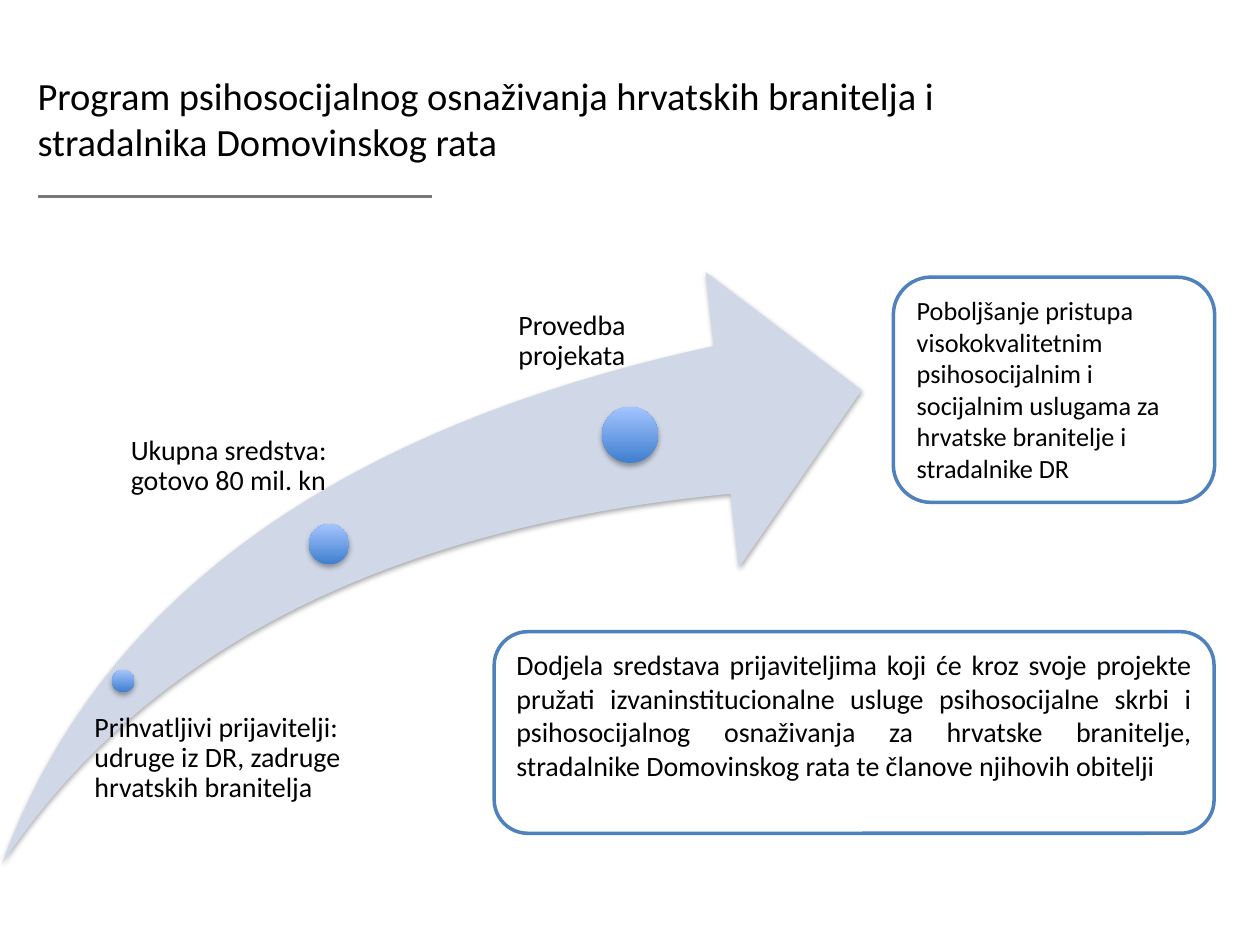
from lxml import etree
from pptx import Presentation
from pptx.dml.color import RGBColor
from pptx.enum.shapes import MSO_CONNECTOR as Connector, MSO_SHAPE as Shape
from pptx.enum.text import MSO_ANCHOR as Anchor, PP_ALIGN as Align
from pptx.oxml import parse_xml
from pptx.oxml.ns import nsdecls, qn
from pptx.util import Pt

THEME = {
    "font": "Calibri",
    "text": "000000", "paper": "FFFFFF", "arrow": "D0D8E8",
    "dot_bottom": "3F7FCE", "dot_top": "A4C4FF",
    "border": "4F81BD", "rule": "777877",
    "title_size": 22, "body_size": 16, "small_size": 15,
}

TITLE = ("Program psihosocijalnog osnaživanja hrvatskih branitelja i "
         "stradalnika Domovinskog rata")
TITLE_AREA = (14.4, 22.3, 605.5, 90)
RULE = (21.6, 112.3, 247, 112.3)
ARROW_AREA = (1.4, 155.5, 491, 337.7)

# Dot centre x, centre y, diameter; label area, left inset, text
STEPS = [
    ((70.4, 389.2, 12.8), (47.5, 407.5, 162.7, 45.4), 6.5,
     "Prihvatljivi prijavitelji: udruge iz DR, zadruge hrvatskih branitelja"),
    ((188, 311, 23), (62.6, 249.1, 146.9, 41), 12.2,
     "Ukupna sredstva: gotovo 80 mil. kn"),
    ((360, 248.5, 32), (279.4, 177.8, 107.3, 58.3), 16.8,
     "Provedba projekata"),
]

PANELS = [
    ((510.5, 158.4, 183.6, 128.7), "small_size", Align.LEFT,
     "Poboljšanje pristupa visokokvalitetnim psihosocijalnim i socijalnim "
     "uslugama za hrvatske branitelje i stradalnike DR"),
    ((282.4, 361, 411.4, 115.2), "body_size", Align.JUSTIFY,
     "Dodjela sredstava prijaviteljima koji će kroz svoje projekte pružati "
     "izvaninstitucionalne usluge psihosocijalne skrbi i psihosocijalnog "
     "osnaživanja za hrvatske branitelje, stradalnike Domovinskog rata te "
     "članove njihovih obitelji"),
]


def colour(name):
    return RGBColor.from_string(THEME[name])


def points(values):
    return [Pt(value) for value in values]


def write(shape, text, size, align=Align.LEFT, anchor=Anchor.TOP):
    frame = shape.text_frame
    frame.word_wrap = True
    frame.vertical_anchor = anchor
    para = frame.paragraphs[0]
    para.text = text
    para.alignment = align
    para.font.name = THEME["font"]
    para.font.size = Pt(THEME[size])
    para.font.color.rgb = colour("text")
    return para


def add_soft_shadow(shape):
    shape._element.spPr.append(parse_xml(
        f'<a:effectLst {nsdecls("a")}>'
        f'<a:outerShdw blurRad="{Pt(3.1)}" dist="{Pt(1.8)}" dir="5400000" rotWithShape="0">'
        '<a:srgbClr val="000000"><a:alpha val="35000"/></a:srgbClr>'
        '</a:outerShdw></a:effectLst>'))


def add_arrow(slide):
    arrow = slide.shapes.add_shape(Shape.SWOOSH_ARROW, *points(ARROW_AREA))
    arrow.adjustments[0] = arrow.adjustments[1] = 0.25
    arrow.fill.solid()
    arrow.fill.fore_color.rgb = colour("arrow")
    arrow.line.fill.background()
    add_soft_shadow(arrow)


def add_dot(slide, centre_x, centre_y, diameter):
    area = (centre_x - diameter / 2, centre_y - diameter / 2, diameter, diameter)
    dot = slide.shapes.add_shape(Shape.OVAL, *points(area))
    dot.fill.gradient()
    dot.fill.gradient_angle = 90
    for stop, name in zip(dot.fill.gradient_stops, ("dot_bottom", "dot_top")):
        stop.color.rgb = colour(name)
    dot.line.fill.background()
    add_soft_shadow(dot)


def add_label(slide, area, inset, text):
    label = slide.shapes.add_textbox(*points(area))
    frame = label.text_frame
    frame.margin_left = Pt(inset)
    frame.margin_top = frame.margin_right = frame.margin_bottom = 0
    write(label, text, "body_size").line_spacing = 0.9


def add_panel(slide, area, size, align, text):
    panel = slide.shapes.add_shape(Shape.ROUNDED_RECTANGLE, *points(area))
    panel.shadow.inherit = False
    panel.fill.solid()
    panel.fill.fore_color.rgb = colour("paper")
    panel.line.color.rgb = colour("border")
    panel.line.width = Pt(2)
    write(panel, text, size, align)


def add_rule(slide):
    rule = slide.shapes.add_connector(Connector.STRAIGHT, *points(RULE))
    rule.line.color.rgb = colour("rule")
    rule.line.width = Pt(2)
    etree.SubElement(rule._element.spPr, qn("a:effectLst"))


def main():
    deck = Presentation()
    deck.slide_width, deck.slide_height = Pt(720), Pt(540)
    slide = deck.slides.add_slide(deck.slide_layouts[6])
    add_arrow(slide)
    for dot, area, inset, text in STEPS:
        add_dot(slide, *dot)
        add_label(slide, area, inset, text)
    add_rule(slide)
    for panel in PANELS:
        add_panel(slide, *panel)
    title = slide.shapes.add_textbox(*points(TITLE_AREA))
    write(title, TITLE, "title_size", anchor=Anchor.MIDDLE)
    deck.save("out.pptx")


if __name__ == "__main__":
    main()
